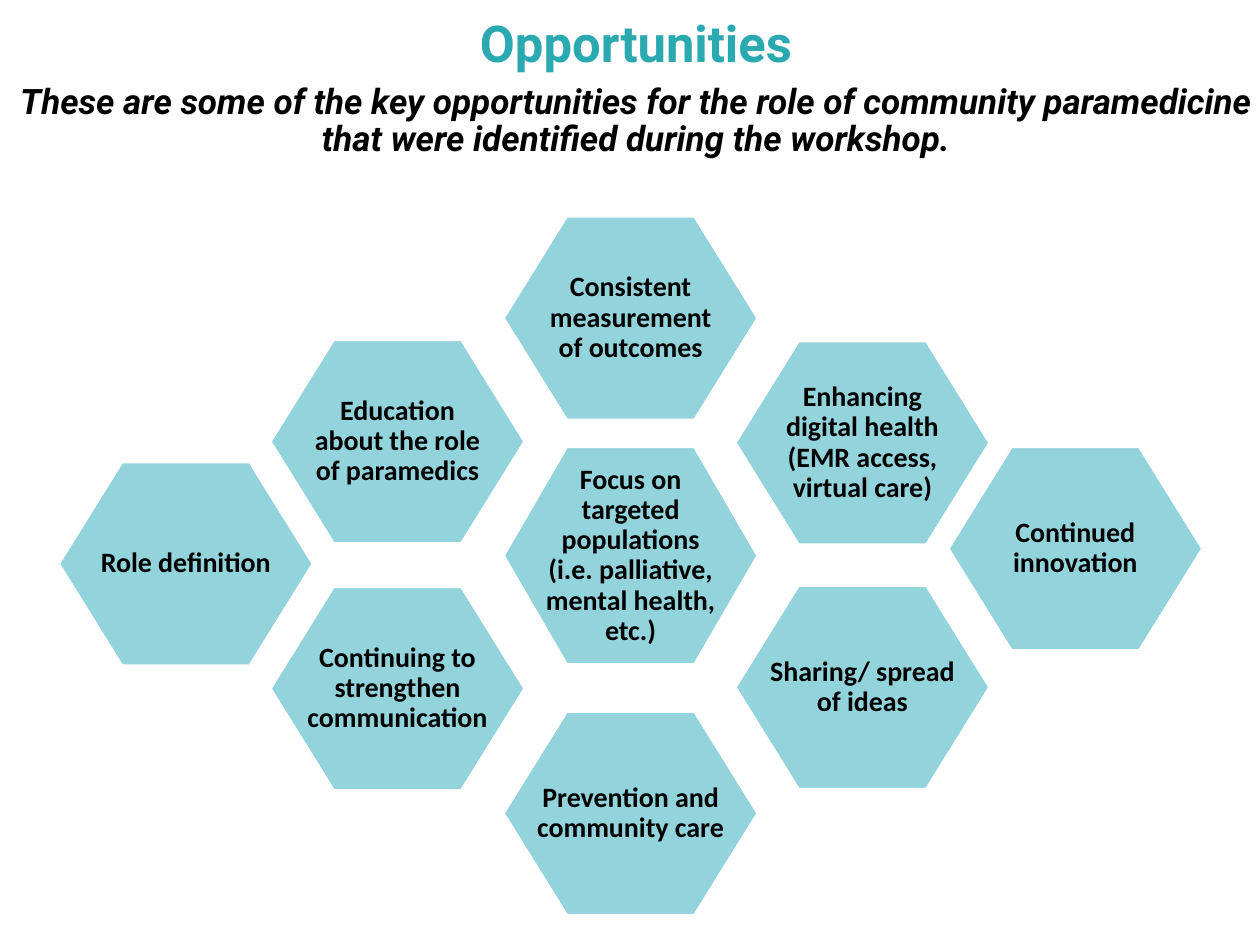
from pptx import Presentation
from pptx.dml.color import RGBColor
from pptx.enum.text import MSO_ANCHOR, MSO_AUTO_SIZE, PP_ALIGN
from pptx.util import Inches, Pt

COLORS = {"heading": "2AA9B1", "text": "000000", "hexagon": "92D3DC", "outline": "FFFFFF"}

HEADING = "Opportunities"
INTRO = ("These are some of the key opportunities for the role of community "
         "paramedicine that were identified during the workshop.")

HEX_WIDTH, HEX_HEIGHT, HEX_SLANT = 2.01, 1.61, 0.5
CENTER_HEIGHT = 1.72
COLUMNS = {"far left": 0.47, "left": 2.15, "center": 4, "right": 5.84, "far right": 7.53}

OPPORTUNITIES = [
    ("Consistent measurement of outcomes", "center", 1.72, HEX_HEIGHT),
    ("Enhancing digital health (EMR access, virtual care)", "right", 2.71, HEX_HEIGHT),
    ("Sharing/ spread of ideas", "right", 4.65, HEX_HEIGHT),
    ("Prevention and community care", "center", 5.65, HEX_HEIGHT),
    ("Continuing to strengthen communication", "left", 4.66, HEX_HEIGHT),
    ("Education about the role of paramedics", "left", 2.7, HEX_HEIGHT),
    ("Role definition", "far left", 3.67, HEX_HEIGHT),
    ("Continued innovation", "far right", 3.55, HEX_HEIGHT),
    ("Focus on targeted populations (i.e. palliative, mental health, etc.)",
     "center", 3.55, CENTER_HEIGHT),
]


def rgb(name):
    return RGBColor.from_string(COLORS[name])


def write(holder, text, size, font="Roboto", color="text", italic=False, insets=(0.1, 0.05)):
    frame = holder.text_frame
    frame.word_wrap = True
    frame.auto_size = MSO_AUTO_SIZE.NONE
    frame.vertical_anchor = MSO_ANCHOR.MIDDLE
    frame.margin_left = frame.margin_right = Inches(insets[0])
    frame.margin_top = frame.margin_bottom = Inches(insets[1])
    paragraph = frame.paragraphs[0]
    paragraph.alignment = PP_ALIGN.CENTER
    paragraph.line_spacing = 0.9
    run = paragraph.add_run()
    run.text = text
    run.font.name = font
    run.font.size = Pt(size)
    run.font.bold = True
    run.font.italic = italic
    run.font.color.rgb = rgb(color)


def add_hexagon(slide, left, top, height):
    right, middle, bottom = left + HEX_WIDTH, top + height / 2, top + height
    corners = [
        (left, middle), (left + HEX_SLANT, top), (right - HEX_SLANT, top),
        (right, middle), (right - HEX_SLANT, bottom), (left + HEX_SLANT, bottom),
    ]
    start, *others = [(Inches(x), Inches(y)) for x, y in corners]
    outline = slide.shapes.build_freeform(*start)
    outline.add_line_segments(others, close=True)
    hexagon = outline.convert_to_shape()
    hexagon.shadow.inherit = False
    hexagon.fill.solid()
    hexagon.fill.fore_color.rgb = rgb("hexagon")
    hexagon.line.color.rgb = rgb("outline")
    hexagon.line.width = Pt(1)
    return hexagon


def main():
    deck = Presentation()
    deck.slide_width, deck.slide_height = Inches(10), Inches(7.5)
    slide = deck.slides.add_slide(deck.slide_layouts[5])

    for text, column, top, height in OPPORTUNITIES:
        hexagon = add_hexagon(slide, COLUMNS[column], top, height)
        write(hexagon, text, 16, font="Calibri", insets=(0.26, 0.23))

    heading = slide.shapes.title
    heading.left, heading.top = Inches(0.05), Inches(0.02)
    heading.width, heading.height = Inches(10), Inches(0.69)
    write(heading, HEADING, 29, color="heading")

    intro = slide.shapes.add_textbox(Inches(0.05), Inches(0.41), Inches(10), Inches(1.11))
    write(intro, INTRO, 20, italic=True)

    deck.save("out.pptx")


if __name__ == "__main__":
    main()
